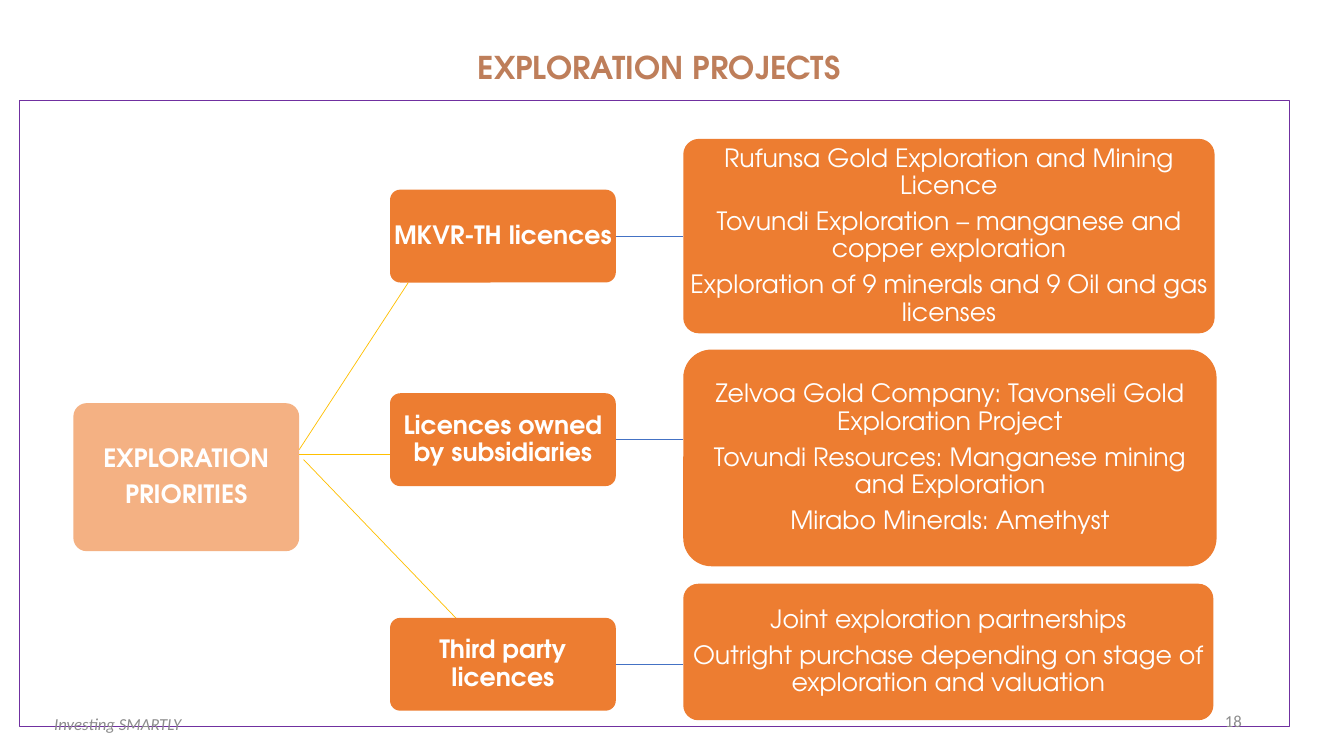
from dataclasses import dataclass

from lxml import etree
from pptx import Presentation
from pptx.dml.color import RGBColor
from pptx.enum.shapes import MSO_CONNECTOR, MSO_SHAPE
from pptx.enum.text import MSO_ANCHOR, MSO_AUTO_SIZE, PP_ALIGN
from pptx.oxml.ns import qn
from pptx.util import Cm, Pt

STRAIGHT = MSO_CONNECTOR.STRAIGHT
ROUNDED, RECTANGLE = MSO_SHAPE.ROUNDED_RECTANGLE, MSO_SHAPE.RECTANGLE
MIDDLE, NO_AUTOFIT = MSO_ANCHOR.MIDDLE, MSO_AUTO_SIZE.NONE
CENTER, RIGHT = PP_ALIGN.CENTER, PP_ALIGN.RIGHT
LEFT_SIDE, RIGHT_SIDE = 1, 3

HEADING_FONT, FOOTER_FONT = "TeX Gyre Adventor", "Calibri"
WHITE, GREY, BROWN, PURPLE = "FFFFFF", "8C8C8C", "BE7E5A", "7030A0"
ORANGE, PEACH, YELLOW, BLUE = "ED7D31", "F4B183", "FFC000", "4472C4"

LICENCE_LEFT, LICENCE_WIDTH, LICENCE_HEIGHT = 9.83, 5.69, 2.34
DETAIL_LEFT = 17.22


@dataclass
class Box:
    """A rounded box; lengths in centimetres, corner as a share of the height."""
    left: float
    top: float
    width: float
    height: float
    corner: float
    paragraphs: list[str]
    fill: str = ORANGE
    bold: bool = False


@dataclass
class Branch:
    licence: str
    licence_top: float
    detail: Box
    line_start: tuple[float, float]
    line_end: tuple[float, float]


BRANCHES = [
    Branch("MKVR-TH licences", 4.78,
           Box(DETAIL_LEFT, 3.5, 13.39, 4.9, 0.08, [
               "Rufunsa Gold Exploration and Mining Licence",
               "Tovundi Exploration – manganese and copper exploration",
               "Exploration of 9 minerals and 9 Oil and gas licenses"]),
           (7.54, 11.33), (10.29, 7.12)),
    Branch("Licences owned by subsidiaries", 9.91,
           Box(DETAIL_LEFT, 8.81, 13.44, 5.46, 0.13, [
               "Zelvoa Gold Company: Tavonseli Gold Exploration Project",
               "Tovundi Resources: Manganese mining and Exploration",
               "Mirabo Minerals: Amethyst"]),
           (7.54, 11.45), (LICENCE_LEFT, 11.45)),
    Branch("Third party licences", 15.57,
           Box(DETAIL_LEFT, 14.71, 13.36, 3.44, 0.11, [
               "Joint exploration partnerships",
               "Outright purchase depending on stage of exploration and valuation"]),
           (7.65, 11.58), (11.63, 15.72)),
]


def color(hex_value: str) -> RGBColor:
    return RGBColor.from_string(hex_value)


def write(shape, paragraphs: list[str], *, font: str = HEADING_FONT, size: float = 18,
          ink: str = WHITE, bold: bool = False, italic: bool = False,
          align=CENTER, line_spacing: float = 0.9, space_after: float = 0,
          inset: float = 0) -> None:
    frame = shape.text_frame
    frame.auto_size = NO_AUTOFIT
    frame.word_wrap = True
    frame.vertical_anchor = MIDDLE
    frame.margin_left = frame.margin_right = Cm(inset)
    frame.margin_top = frame.margin_bottom = Cm(inset / 2)
    for index, text in enumerate(paragraphs):
        paragraph = frame.add_paragraph() if index else frame.paragraphs[0]
        paragraph.alignment = align
        paragraph.line_spacing = line_spacing
        paragraph.space_before = Pt(0)
        paragraph.space_after = Pt(space_after)
        run = paragraph.add_run()
        run.text = text
        run.font.name = font
        run.font.size = Pt(size)
        run.font.bold = bold
        run.font.italic = italic
        run.font.color.rgb = color(ink)


def add_box(slide, box: Box):
    shape = slide.shapes.add_shape(
        ROUNDED, Cm(box.left), Cm(box.top), Cm(box.width), Cm(box.height))
    shape.adjustments[0] = box.corner
    shape.shadow.inherit = False
    shape.fill.solid()
    shape.fill.fore_color.rgb = color(box.fill)
    shape.line.fill.background()
    write(shape, box.paragraphs, bold=box.bold, space_after=6.3)
    return shape


def add_line(slide, start: tuple[int, int], end: tuple[int, int], ink: str):
    line = slide.shapes.add_connector(STRAIGHT, *start, *end)
    line.line.color.rgb = color(ink)
    line.line.width = Pt(0.5)
    etree.SubElement(line._element.spPr, qn("a:effectLst"))
    return line


def add_branch(slide, branch: Branch) -> None:
    add_line(slide, tuple(map(Cm, branch.line_start)),
             tuple(map(Cm, branch.line_end)), YELLOW)
    licence = add_box(slide, Box(LICENCE_LEFT, branch.licence_top, LICENCE_WIDTH,
                                 LICENCE_HEIGHT, 0.11, [branch.licence], bold=True))
    detail = add_box(slide, branch.detail)
    middle = licence.top + licence.height // 2
    link = add_line(slide, (licence.left + licence.width, middle),
                    (detail.left, middle), BLUE)
    link.begin_connect(licence, RIGHT_SIDE)
    if abs(detail.top + detail.height // 2 - middle) < Cm(0.05):
        link.end_connect(detail, LEFT_SIDE)


def add_footer(slide, text: str, left: float, top: float, width: float, **style) -> None:
    footer = slide.shapes.add_textbox(Cm(left), Cm(top), Cm(width), Cm(1.02))
    write(footer, [text], font=FOOTER_FONT, size=12, ink=GREY,
          line_spacing=1, inset=0.25, **style)


def main() -> None:
    presentation = Presentation()
    presentation.slide_width, presentation.slide_height = Cm(33.87), Cm(19.05)
    slide = presentation.slides.add_slide(presentation.slide_layouts[5])

    title = slide.shapes.title
    title.left, title.top, title.width, title.height = map(Cm, (0.74, 0.94, 31.75, 1.6))
    write(title, ["EXPLORATION PROJECTS"], size=22.4, ink=BROWN, bold=True, inset=0.25)

    border = slide.shapes.add_shape(RECTANGLE, *map(Cm, (0.48, 2.53, 32, 15.77)))
    border.shadow.inherit = False
    border.fill.background()
    border.line.color.rgb = color(PURPLE)
    border.line.width = Pt(0.25)

    add_box(slide, Box(1.85, 10.16, 5.69, 3.73, 0.09,
                       ["EXPLORATION", "PRIORITIES"], fill=PEACH, bold=True))
    for branch in BRANCHES:
        add_branch(slide, branch)

    add_footer(slide, "Investing SMARTLY", 0.43, 17.73, 5.08, italic=True)
    add_footer(slide, "18", 23.93, 17.65, 7.62, align=RIGHT)
    presentation.save("out.pptx")


if __name__ == "__main__":
    main()
